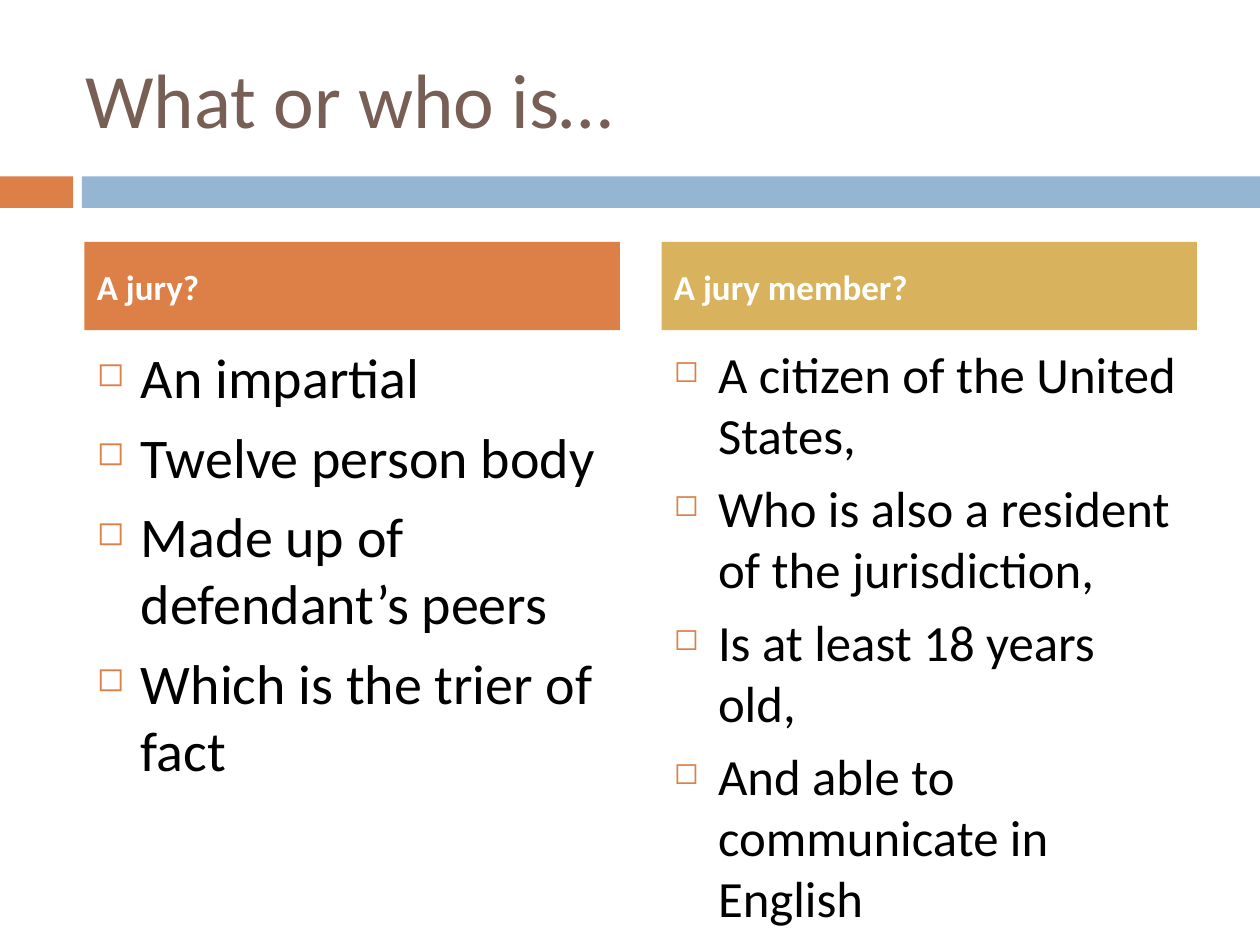
from lxml import etree
from pptx import Presentation
from pptx.dml.color import RGBColor
from pptx.enum import shapes, text
from pptx.oxml.ns import qn
from pptx.util import Inches, Pt

HUES = {"rust": "DD8047", "sky": "94B6D2", "gold": "D8B25C",
        "brown": "775F55", "ink": "000000", "white": "FFFFFF"}
WIDE, HIGH = 10, 7.5
LEFT, COL, STEP = 0.67, 4.25, 4.58
LISTS = [
    ("A jury?", "rust", 32,
     ["An impartial", "Twelve person body", "Made up of defendant’s peers",
      "Which is the trier of fact"]),
    ("A jury member?", "gold", 29,
     ["A citizen of the United States,",
      "Who is also a resident of the jurisdiction,",
      "Is at least 18 years old,", "And able to communicate in English"]),
]


def tint(name):
    return RGBColor.from_string(HUES[name])


def band(slide, box, hue):
    bar = slide.shapes.add_shape(shapes.MSO_SHAPE.RECTANGLE, *map(Inches, box))
    bar.shadow.inherit = False
    bar.fill.solid()
    bar.fill.fore_color.rgb = tint(hue)
    bar.line.fill.background()
    return bar


def field(slide, box):
    return slide.shapes.add_textbox(*map(Inches, box))


def mark(para, hue):
    props = para._p.get_or_add_pPr()
    props.set("marL", str(Inches(0.35)))
    props.set("indent", str(-Inches(0.35)))
    color = etree.SubElement(props, qn("a:buClr"))
    etree.SubElement(color, qn("a:srgbClr"), val=HUES[hue])
    etree.SubElement(props, qn("a:buSzPct"), val="60000")
    etree.SubElement(props, qn("a:buChar"), char="◻")


def write(shape, lines, size, hue, bold=False, gap=0, mid=False, dot=None):
    frame = shape.text_frame
    frame.word_wrap = True
    anchor = text.MSO_ANCHOR
    frame.vertical_anchor = anchor.MIDDLE if mid else anchor.TOP
    for i, line in enumerate(lines):
        para = frame.paragraphs[0] if i == 0 else frame.add_paragraph()
        para.alignment = text.PP_ALIGN.LEFT
        para.space_before = Pt(gap)
        if dot:
            mark(para, dot)
        run = para.add_run()
        run.text = line
        run.font.name = "Calibri"
        run.font.size = Pt(size)
        run.font.bold = bold
        run.font.color.rgb = tint(hue)


def column(slide, left, head, hue, size, lines):
    write(band(slide, (left, 1.92, COL, 0.7), hue), [head], 20, "white",
          bold=True, gap=7, mid=True)
    write(field(slide, (left, 2.67, COL, 3.92)), lines, size, "ink",
          gap=7, dot="rust")


def main():
    deck = Presentation()
    deck.slide_width, deck.slide_height = Inches(WIDE), Inches(HIGH)
    slide = deck.slides.add_slide(deck.slide_layouts[6])
    band(slide, (0, 1.4, 0.58, 0.25), "rust")
    band(slide, (0.65, 1.4, WIDE - 0.65, 0.25), "sky")
    write(field(slide, (0.58, 0.3, 8.92, 0.95)), ["What or who is…"], 44,
          "brown", mid=True)
    for i, part in enumerate(LISTS):
        column(slide, LEFT + i * STEP, *part)
    deck.save("out.pptx")


if __name__ == "__main__":
    main()
